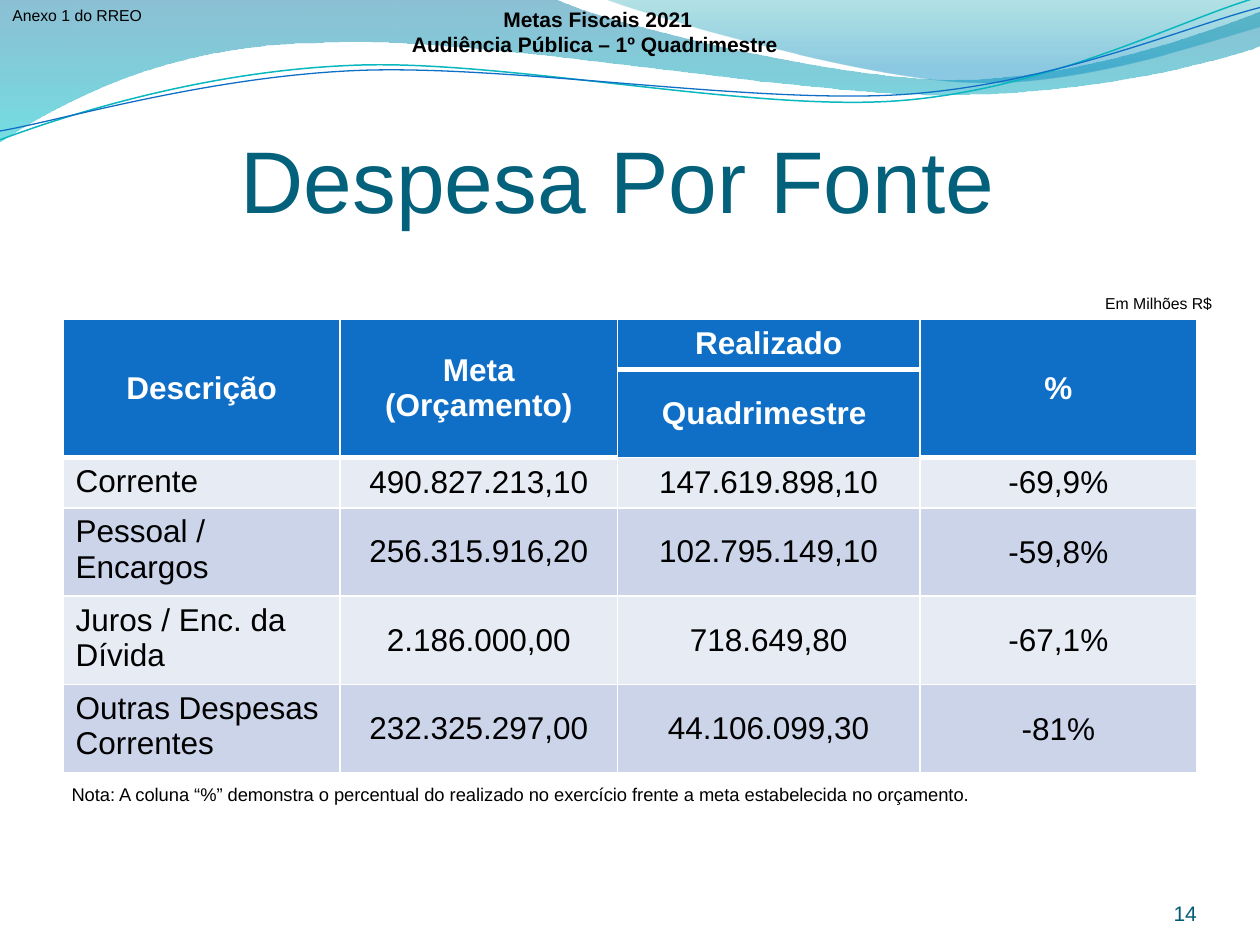
from lxml.etree import SubElement
from math import cos, radians, sin
from pptx import Presentation
from pptx.dml.color import RGBColor
from pptx.enum.text import MSO_ANCHOR, MSO_AUTO_SIZE, PP_ALIGN
from pptx.oxml.ns import qn
from pptx.util import Inches, Pt

WHITE = RGBColor(0xFF, 0xFF, 0xFF)
BLACK = RGBColor(0x00, 0x00, 0x00)
TITLE_TEAL = RGBColor(0x04, 0x61, 0x7B)
NUMBER_TEAL = RGBColor(0x03, 0x5C, 0x75)
HEADER_BLUE = RGBColor(0x0F, 0x6F, 0xC6)
LINE_TEAL = RGBColor(0x09, 0xB7, 0xBF)
LIGHT_BAND = RGBColor(0xE7, 0xEB, 0xF4)
DARK_BAND = RGBColor(0xCC, 0xD4, 0xEA)
DEEP_BLUE = RGBColor(0x00, 0x74, 0xA0)
CYAN = RGBColor(0x00, 0xC4, 0xCD)
SKY_BLUE = RGBColor(0x00, 0x8A, 0xBF)
SEA_GREEN = RGBColor(0x00, 0xA0, 0xA8)
TILT = 357.3

deck = Presentation()
deck.slide_width, deck.slide_height = Inches(10), Inches(7.5)
page = deck.slides.add_slide(deck.slide_layouts[6])


def draw_wave(segments, closed):
    corners = [(Inches(segment[-2]), Inches(segment[-1])) for segment in segments]
    builder = page.shapes.build_freeform(*corners[0], scale=1.0)
    builder.add_line_segments(corners[1:], close=closed)
    wave = builder.convert_to_shape()
    wave.shadow.inherit = False
    steps = list(wave.element.spPr.iter(qn("a:lnTo")))
    for step, segment in zip(steps, segments[1:]):
        if len(segment) == 6:
            curve = step.makeelement(qn("a:cubicBezTo"))
            for x, y in zip(segment[::2], segment[1::2]):
                SubElement(curve, qn("a:pt"), x=str(Inches(x) - wave.left), y=str(Inches(y) - wave.top))
            step.getparent().replace(step, curve)
    return wave


def write_text(frame, lines, align, font_format):
    for index, line in enumerate(lines):
        para = frame.paragraphs[0] if index == 0 else frame.add_paragraph()
        para.alignment = align
        span = para.add_run()
        span.text = line
        span.font.name = "Arial"
        span.font.color.rgb = font_format["color"]
        for name in ("size", "bold"):
            setattr(span.font, name, font_format[name])


bands = [
    ([(0, 0), (4.4, -0.01), (4.76, 0.17, 6.64, 0.63, 7.58, 0.63), (8.53, 0.63, 9.58, 0.26, 10, 0.09),
      (10.01, 0.36), (9.83, 0.44, 8.7, 0.76, 7.46, 0.75), (6.22, 0.75, 3.82, 0.28, 2.57, 0.34),
      (1.29, 0.35, 0.46, 0.83, -0.01, 1.13), (0, 0)],
     270, [(0, DEEP_BLUE, 45), (1, CYAN, 55)]),
    ([(4.79, -0.01), (5.09, 0.11, 6.82, 0.62, 7.69, 0.65), (8.56, 0.69, 9.61, 0.32, 10, 0.21), (10, 0),
      (4.79, -0.01)],
     90, [(0.2, SKY_BLUE, 45), (1, SEA_GREEN, 30)]),
]
for segments, angle, stops in bands:
    band = draw_wave(segments, True)
    band.line.fill.background()
    band.fill.gradient()
    band.fill.gradient_angle = angle
    for stop, (position, color, opacity) in zip(band.fill.gradient_stops, stops):
        stop.position = position
        stop.color.rgb = color
    for element, (position, color, opacity) in zip(band.element.spPr.iter(qn("a:srgbClr")), stops):
        SubElement(element, qn("a:alpha"), val=str(opacity * 1000))

strands = [
    ([(0, 1.11), (0.48, 0.93, 1.58, 0.57, 2.77, 0.52), (3.95, 0.46, 5.93, 0.89, 7.13, 0.8),
      (8.33, 0.71, 9.38, 0.15, 9.98, -0.02)], (4.99, 0.57), LINE_TEAL, 0.85),
    ([(0, 1.04), (0.47, 0.96, 1.64, 0.61, 2.83, 0.56), (4.03, 0.51, 5.97, 0.83, 7.17, 0.75),
      (8.36, 0.67, 9.41, 0.21, 10, 0.06)], (5, 0.59), HEADER_BLUE, 0.75),
]
turn = radians(-TILT)
for segments, (middle_x, middle_y), color, width in strands:
    level = []
    for segment in segments:
        offsets = [(x - middle_x, y - middle_y) for x, y in zip(segment[::2], segment[1::2])]
        level.append([value for x, y in offsets for value in (
            middle_x + x * cos(turn) - y * sin(turn), middle_y + x * sin(turn) + y * cos(turn))])
    strand = draw_wave(level, False)
    strand.rotation = TILT
    strand.fill.background()
    strand.line.color.rgb = color
    strand.line.width = Pt(width)

LEFT, CENTER, RIGHT = PP_ALIGN.LEFT, PP_ALIGN.CENTER, PP_ALIGN.RIGHT
TOP, MIDDLE, BOTTOM = MSO_ANCHOR.TOP, MSO_ANCHOR.MIDDLE, MSO_ANCHOR.BOTTOM
FIXED, GROW = MSO_AUTO_SIZE.NONE, MSO_AUTO_SIZE.SHAPE_TO_FIT_TEXT
USUAL_INSETS = (0.1, 0.05, 0.1, 0.05)
SIDES = ("margin_left", "margin_top", "margin_right", "margin_bottom")
texts = [
    (["Despesa Por Fonte "], (0.5, 0.77, 9, 1.25), CENTER, MIDDLE, FIXED, (0, 0.05, 0, 0), 50, TITLE_TEAL, False),
    (["14"], (8.67, 6.95, 0.83, 0.4), RIGHT, BOTTOM, FIXED, (0, 0, 0, 0), 12, NUMBER_TEAL, False),
    (["Em Milhões R$"], (8.67, 2.28, 1.05, 0.25), CENTER, TOP, GROW, USUAL_INSETS, 9, BLACK, False),
    (["Anexo 1 do RREO"], (0, 0, 1.36, 0.25), LEFT, TOP, GROW, USUAL_INSETS, 9, BLACK, False),
    (["Nota: A coluna “%” demonstra o percentual do realizado no exercício frente a meta "
      "estabelecida no orçamento."], (0.47, 6.17, 9, 0.27), LEFT, TOP, GROW, USUAL_INSETS, 10.5, BLACK, False),
    (["Metas Fiscais 2021", "Audiência Pública – 1º Quadrimestre "],
     (3.05, 0, 3.39, 0.5), CENTER, MIDDLE, GROW, USUAL_INSETS, 12, BLACK, True),
]
for lines, place, align, anchor, sizing, insets, size, color, bold in texts:
    box = page.shapes.add_textbox(*map(Inches, place))
    frame_format = {"word_wrap": True, "auto_size": sizing, "vertical_anchor": anchor}
    frame_format.update(zip(SIDES, map(Inches, insets)))
    for name, value in frame_format.items():
        setattr(box.text_frame, name, value)
    write_text(box.text_frame, lines, align, {"size": Pt(size), "color": color, "bold": bold})

rows = [
    ["Descrição", "Meta (Orçamento)", "Realizado", "%"],
    ["", "", "Quadrimestre ", ""],
    ["Corrente", "490.827.213,10", "147.619.898,10", "-69,9%"],
    ["Pessoal / Encargos", "256.315.916,20", "102.795.149,10", "-59,8%"],
    ["Juros / Enc. da Dívida", "2.186.000,00", "718.649,80", "-67,1%"],
    ["Outras Despesas Correntes", "232.325.297,00", "44.106.099,30", "-81%"],
]
table_frame = page.shapes.add_table(6, 4, Inches(0.5), Inches(2.53), Inches(9), Inches(3.56))
table = table_frame.table
table.first_row = table.horz_banding = False
for column, width in zip(table.columns, (2.2, 2.2, 2.4, 2.2)):
    column.width = Inches(width)
for row, height in zip(table.rows, (0.38, 0.66, 0.38, 0.66, 0.66, 0.66)):
    row.height = Inches(height)
table_frame.height = Inches(3.56)
for column in (0, 1, 3):
    table.cell(0, column).merge(table.cell(1, column))

for r, row in enumerate(rows):
    for c, text in enumerate(row):
        cell = table.cell(r, c)
        header = r < 2
        thick_top = r == 1 and c == 2 or r == 2 and c != 2
        thick_bottom = r == 0 or r == 1 and c != 2
        widths = {"lnL": 0.96, "lnR": 0.96, "lnT": 3 if thick_top else 0.96, "lnB": 3 if thick_bottom else 0.96}
        properties = cell._tc.get_or_add_tcPr()
        for tag, width in widths.items():
            border = SubElement(properties, qn("a:" + tag), w=str(Pt(width)))
            paint = SubElement(border, qn("a:solidFill"))
            SubElement(paint, qn("a:srgbClr"), val=str(WHITE))
        cell.fill.solid()
        cell.fill.fore_color.rgb = HEADER_BLUE if header else DARK_BAND if r % 2 else LIGHT_BAND
        label = c == 0 and not header
        cell.vertical_anchor = TOP if label else MIDDLE
        if c == 3 and r > 2:
            for side, inset in zip(SIDES, (0.01, 0.01, 0.01, 0)):
                setattr(cell, side, Inches(inset))
        if text:
            write_text(cell.text_frame, [text], LEFT if label else CENTER,
                       {"size": Pt(18), "color": WHITE if header else BLACK, "bold": header})

deck.save("out.pptx")
